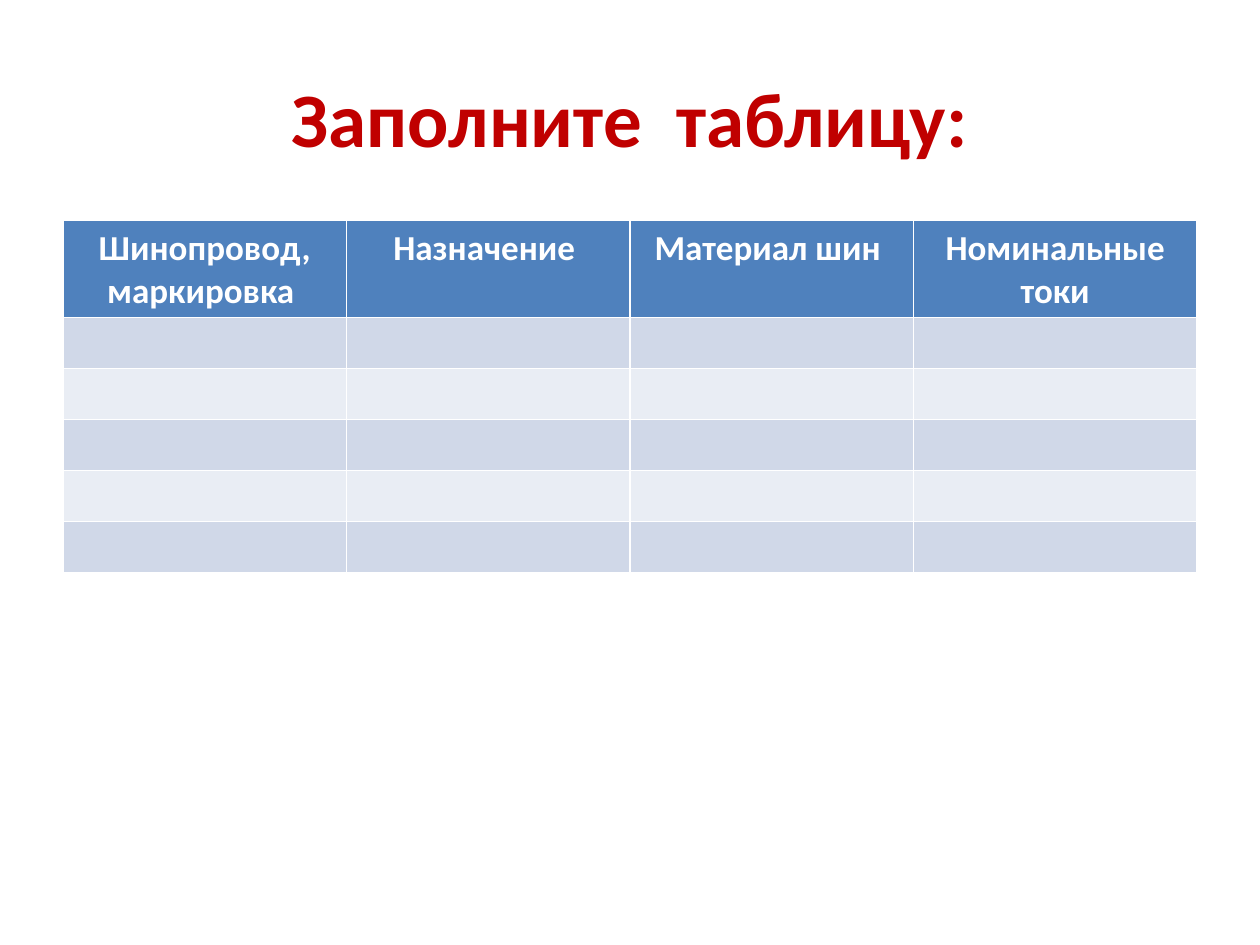
from pptx import Presentation
from pptx.dml.color import RGBColor
from pptx.enum import text
from pptx.util import Inches, Pt

RED = RGBColor(0xC0, 0x00, 0x00)
WHITE = RGBColor(0xFF, 0xFF, 0xFF)
BLUE = RGBColor(0x4F, 0x81, 0xBD)
BANDS = [RGBColor(0xD0, 0xD8, 0xE8), RGBColor(0xE9, 0xED, 0xF4)]
HEADERS = ["Шинопровод, маркировка ", "Назначение ", "Материал шин ", "Номинальные токи"]
BODY_ROWS = 5
HEADER_H, ROW_H = 0.77, 0.405


def write(tf, content, size, color, bold=True, font="Calibri"):
    p = tf.paragraphs[0]
    p.alignment = text.PP_ALIGN.CENTER
    r = p.add_run()
    r.text = content
    r.font.name = font
    r.font.size = Pt(size)
    r.font.bold = bold
    r.font.color.rgb = color


prs = Presentation()
prs.slide_width, prs.slide_height = Inches(10), Inches(7.5)
s = prs.slides.add_slide(prs.slide_layouts[6])

title = s.shapes.add_textbox(Inches(0.5), Inches(0.3), Inches(9), Inches(1.25))
title.text_frame.word_wrap = True
title.text_frame.vertical_anchor = text.MSO_ANCHOR.MIDDLE
write(title.text_frame, "Заполните  таблицу:", size=44, color=RED)

# The default table style draws the white cell borders.
table = s.shapes.add_table(
    BODY_ROWS + 1, len(HEADERS), Inches(0.5), Inches(1.75),
    Inches(9), Inches(HEADER_H + BODY_ROWS * ROW_H)).table

for i, row in enumerate(table.rows):
    row.height = Inches(ROW_H if i else HEADER_H)
    for cell in row.cells:
        cell.fill.solid()
        cell.fill.fore_color.rgb = BANDS[(i - 1) % 2] if i else BLUE

for cell, header in zip(table.rows[0].cells, HEADERS):
    write(cell.text_frame, header, size=20, color=WHITE)

prs.save("out.pptx")
